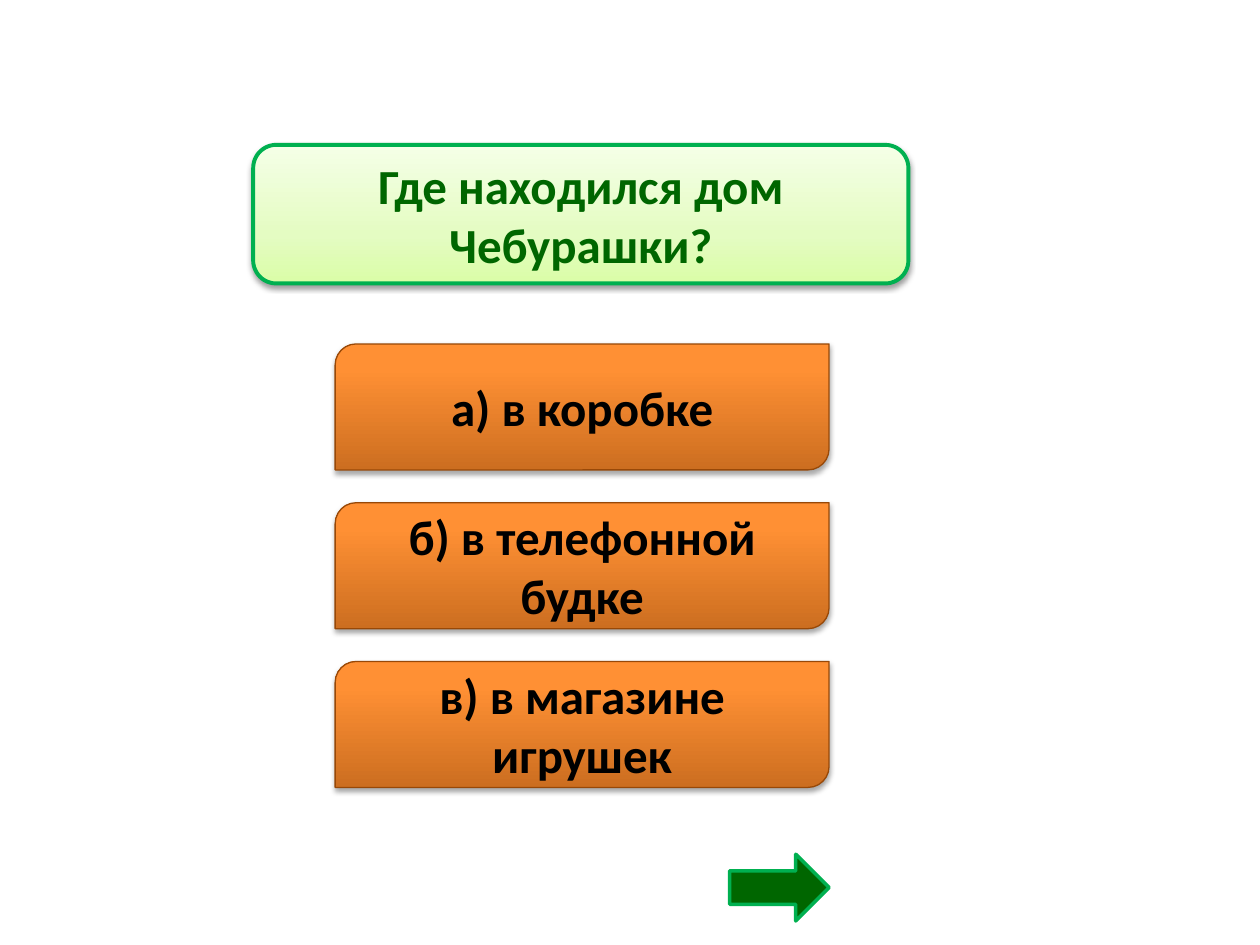
from dataclasses import dataclass

from lxml import etree
from pptx import Presentation
from pptx import util as u
from pptx.dml.color import RGBColor
from pptx.enum import shapes, text
from pptx.oxml.ns import qn

COLOURS = {
    "green": "006600",
    "green_line": "00B050",
    "brown_line": "984807",
    "black": "000000",
}
FONT = "Calibri"


@dataclass(frozen=True)
class BoxStyle:
    """Look shared by boxes of one kind; stops run from bottom to top."""
    preset: shapes.MSO_SHAPE
    stops: tuple[tuple[int, str], ...]
    line: str
    line_width: float
    font_colour: str
    shadow_opacity: int
    shadow_distance: float


QUESTION = BoxStyle(
    shapes.MSO_SHAPE.ROUNDED_RECTANGLE,
    ((0, "DAFDA7"), (35, "E4FCC2"), (100, "F5FFE7")),
    "green_line", 2.25, "green", 38, 1.6,
)
ANSWER = BoxStyle(
    shapes.MSO_SHAPE.ROUND_2_DIAG_RECTANGLE,
    ((0, "CC6E20"), (80, "FF9034"), (100, "FF9136")),
    "brown_line", 0.75, "black", 35, 1.8,
)

ANSWERS = ("а) в коробке", "б) в телефонной будке", "в) в магазине игрушек")
ANSWER_LEFT, ANSWER_TOP, ANSWER_STEP = 2.66, 2.73, 1.26
ANSWER_WIDTH, ANSWER_HEIGHT = 3.92, 1


def rgb(name: str) -> RGBColor:
    return RGBColor.from_string(COLOURS[name])


def add_colour(parent, value: str):
    return etree.SubElement(parent, qn("a:srgbClr"), val=value)


def set_gradient(shape, stops: tuple[tuple[int, str], ...]) -> None:
    shape.fill.gradient()
    shape.fill.gradient_angle = 90
    stop_list = shape._element.spPr.find(f".//{qn('a:gsLst')}")
    for old_stop in list(stop_list):
        stop_list.remove(old_stop)
    for position, colour in stops:
        stop = etree.SubElement(stop_list, qn("a:gs"), pos=str(position * 1000))
        add_colour(stop, colour)


def set_shadow(shape, opacity: int, distance: float) -> None:
    shape.shadow.inherit = False
    effects = shape._element.spPr.find(qn("a:effectLst"))
    shadow = etree.SubElement(
        effects, qn("a:outerShdw"), blurRad=str(u.Pt(3.1)),
        dist=str(u.Pt(distance)), dir="5400000", rotWithShape="0",
    )
    colour = add_colour(shadow, COLOURS["black"])
    etree.SubElement(colour, qn("a:alpha"), val=str(opacity * 1000))


def add_box(slide, style: BoxStyle, wording: str,
            left: float, top: float, width: float, height: float) -> None:
    shape = slide.shapes.add_shape(
        style.preset, u.Inches(left), u.Inches(top),
        u.Inches(width), u.Inches(height),
    )
    set_gradient(shape, style.stops)
    shape.line.color.rgb = rgb(style.line)
    shape.line.width = u.Pt(style.line_width)
    set_shadow(shape, style.shadow_opacity, style.shadow_distance)

    frame = shape.text_frame
    frame.text = wording
    frame.word_wrap = True
    frame.vertical_anchor = text.MSO_ANCHOR.MIDDLE
    paragraph = frame.paragraphs[0]
    paragraph.alignment = text.PP_ALIGN.CENTER
    font = paragraph.runs[0].font
    font.name, font.size, font.bold = FONT, u.Pt(28), True
    font.color.rgb = rgb(style.font_colour)


def add_next_arrow(slide) -> None:
    width = 0.79
    left = ANSWER_LEFT + ANSWER_WIDTH - width  # flush with the answers
    arrow = slide.shapes.add_shape(
        shapes.MSO_SHAPE.RIGHT_ARROW, u.Inches(left), u.Inches(6.78),
        u.Inches(width), u.Inches(0.53),
    )
    arrow.fill.solid()
    arrow.fill.fore_color.rgb = rgb("green")
    arrow.line.color.rgb = rgb("green_line")
    arrow.line.width = u.Pt(2)
    arrow.shadow.inherit = False


def main() -> None:
    presentation = Presentation()
    presentation.slide_width = u.Inches(10)
    presentation.slide_height = u.Inches(7.5)
    slide = presentation.slides.add_slide(presentation.slide_layouts[6])

    # Question
    add_box(slide, QUESTION, "Где находился дом Чебурашки?", 2.01, 1.15, 5.2, 1.1)

    # Answer options
    for index, answer in enumerate(ANSWERS):
        add_box(slide, ANSWER, answer, ANSWER_LEFT,
                ANSWER_TOP + index * ANSWER_STEP, ANSWER_WIDTH, ANSWER_HEIGHT)

    # Arrow to the next question
    add_next_arrow(slide)

    presentation.save("out.pptx")


if __name__ == "__main__":
    main()
